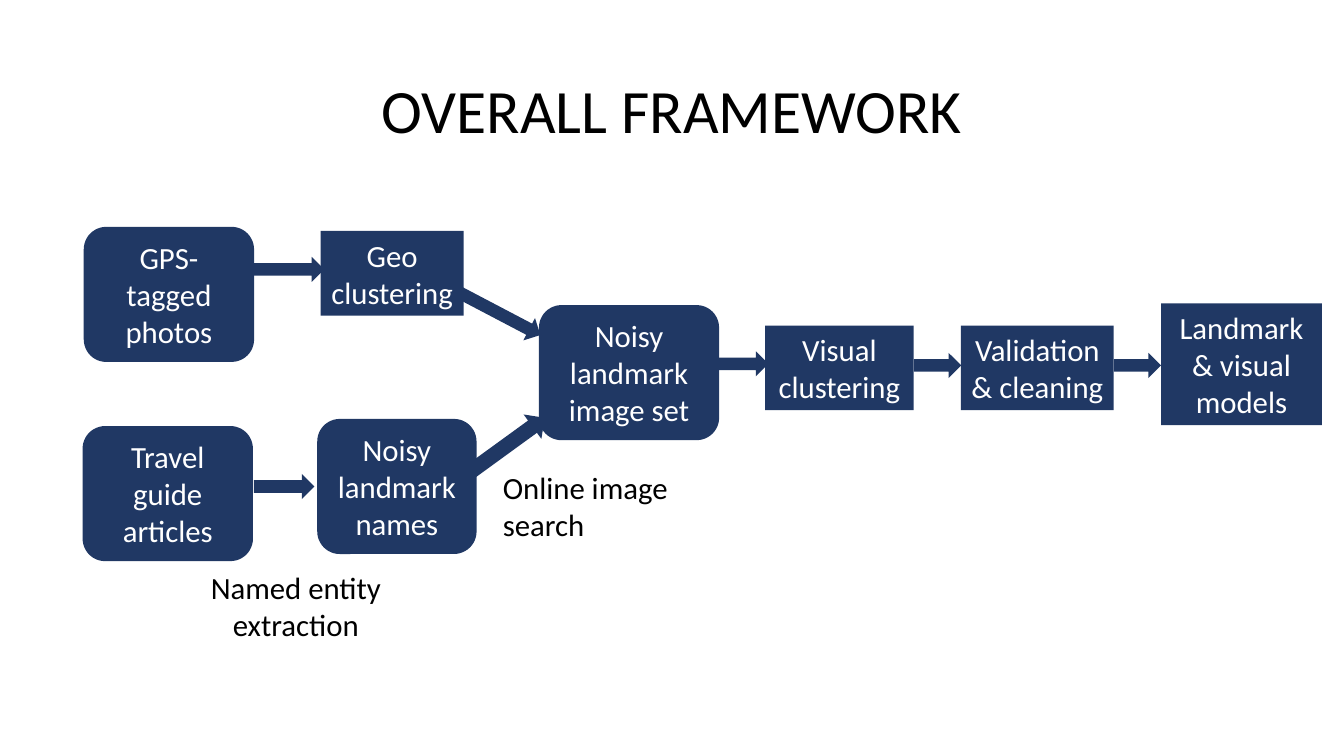
from pptx import Presentation
from pptx.dml.color import RGBColor
from pptx.enum.shapes import MSO_SHAPE
from pptx.enum.text import MSO_ANCHOR, PP_ALIGN
from pptx.util import Pt

ROUNDED, RECTANGLE, ARROW = MSO_SHAPE.ROUNDED_RECTANGLE, MSO_SHAPE.RECTANGLE, MSO_SHAPE.RIGHT_ARROW
LEFT, CENTER = PP_ALIGN.LEFT, PP_ALIGN.CENTER
TOP, MIDDLE = MSO_ANCHOR.TOP, MSO_ANCHOR.MIDDLE

FONT, TITLE_SIZE, BODY_SIZE = "Calibri", 44, 22
NAVY, BLACK, WHITE = "203864", "000000", "FFFFFF"
DATA_HEIGHT, TWO_LINES, THREE_LINES = 96.5, 60.5, 87.1
ARROW_HEIGHT = 18

TITLE = ("OVERALL FRAMEWORK", 66.2, 28.8, 828, 104.4)

# text, left, centre y, width
DATA_BOXES = [
    ("GPS-tagged photos", 59.8, 210.3, 121.7),
    ("Travel guide articles", 59, 352.6, 121.7),
    ("Noisy landmark image set", 385, 266.2, 128.7),
    ("Noisy landmark names", 226.6, 347.5, 113.8),
]
STEP_BOXES = [
    ("Geo clustering", 229, 195.2, 102.2, TWO_LINES),
    ("Visual clustering", 546.6, 262.8, 106, TWO_LINES),
    ("Validation & cleaning", 686.4, 262.8, 109.2, TWO_LINES),
    ("Landmark & visual models", 829.3, 260.2, 115, THREE_LINES),
]
NOTES = [
    ("Online image search", 352.1, 331.2, 185, LEFT),
    ("Named entity extraction", 108.7, 402.7, 205.2, CENTER),
]
# left, centre y, width, height, rotation
ARROWS = [
    (181.2, 192.4, 50.4, ARROW_HEIGHT, 0),
    (181.4, 347.5, 43.2, ARROW_HEIGHT, 0),
    (324.9, 224.3, 64.8, ARROW_HEIGHT, 27.7),
    (330.5, 317.5, 64.8, 21.6, 324),
    (512.9, 259.9, 36, ARROW_HEIGHT, 0),
    (652.8, 261, 33.8, ARROW_HEIGHT, 0),
    (795.6, 261, 33.8, ARROW_HEIGHT, 0),
]


def color(value):
    return RGBColor.from_string(value)


def write(shape, text, size, ink, align, anchor):
    frame = shape.text_frame
    frame.word_wrap = True
    frame.vertical_anchor = anchor
    paragraph = frame.paragraphs[0]
    paragraph.alignment = align
    run = paragraph.add_run()
    run.text = text
    run.font.name, run.font.size = FONT, Pt(size)
    run.font.color.rgb = color(ink)
    return paragraph


def add_navy_shape(slide, kind, left, middle, width, height):
    shape = slide.shapes.add_shape(kind, Pt(left), Pt(middle - height / 2), Pt(width), Pt(height))
    shape.shadow.inherit = False
    shape.fill.solid()
    shape.fill.fore_color.rgb = color(NAVY)
    shape.line.fill.background()
    return shape


def add_text(slide, text, left, top, width, height, size, align, anchor):
    box = slide.shapes.add_textbox(Pt(left), Pt(top), Pt(width), Pt(height))
    return write(box, text, size, BLACK, align, anchor)


def main():
    """Build the framework flow slide."""
    presentation = Presentation()
    presentation.slide_width, presentation.slide_height = Pt(960), Pt(540)
    slide = presentation.slides.add_slide(presentation.slide_layouts[6])

    title = add_text(slide, *TITLE, TITLE_SIZE, CENTER, MIDDLE)
    title.line_spacing = 0.9
    for text, left, top, width, align in NOTES:
        add_text(slide, text, left, top, width, TWO_LINES, BODY_SIZE, align, TOP)

    boxes = [(ROUNDED, *box, DATA_HEIGHT) for box in DATA_BOXES]
    boxes += [(RECTANGLE, *box) for box in STEP_BOXES]
    for kind, text, *place in boxes:
        shape = add_navy_shape(slide, kind, *place)
        write(shape, text, BODY_SIZE, WHITE, CENTER, MIDDLE)

    for *place, rotation in ARROWS:
        add_navy_shape(slide, ARROW, *place).rotation = rotation

    presentation.save("out.pptx")


if __name__ == "__main__":
    main()
